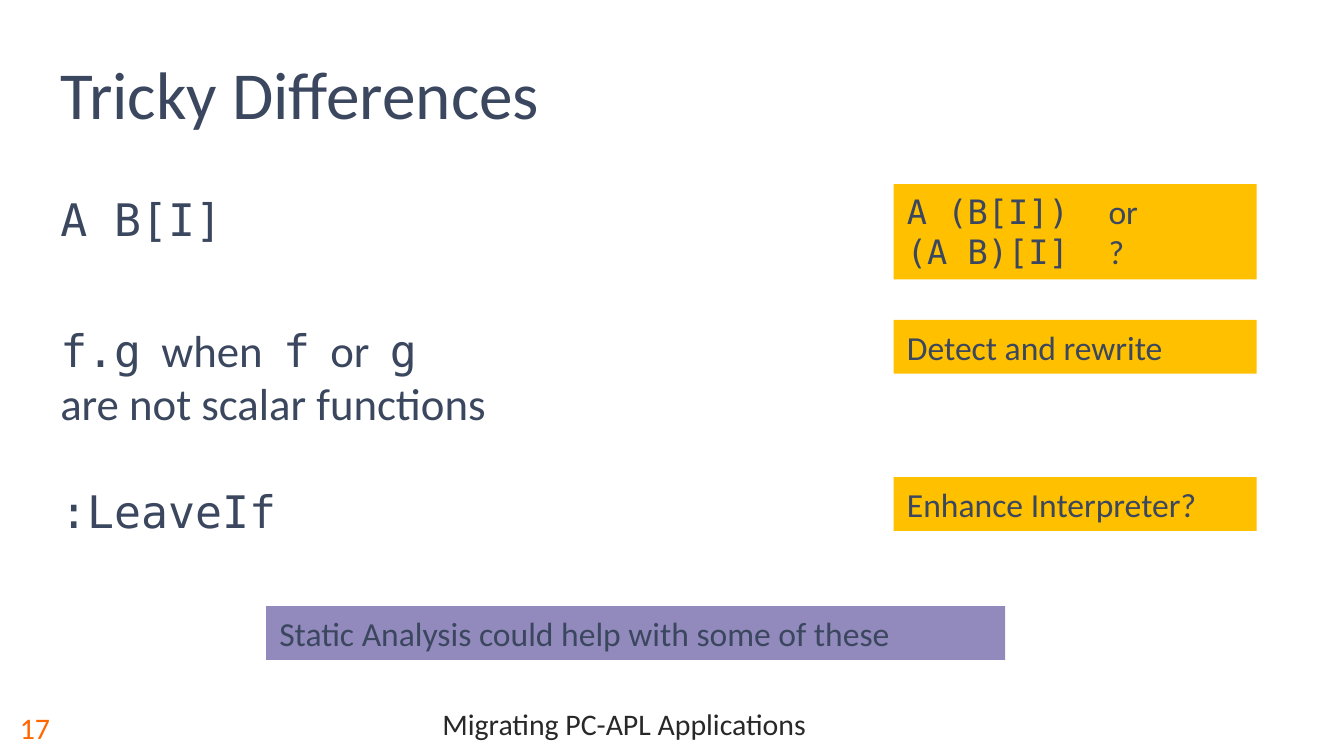
from lxml import etree
from pptx import Presentation
from pptx.dml.color import RGBColor
from pptx.enum.shapes import MSO_SHAPE
from pptx.enum.text import MSO_ANCHOR, PP_ALIGN
from pptx.oxml.ns import qn
from pptx.util import Inches, Pt

RECT = MSO_SHAPE.RECTANGLE
TOP, MID, LOW = MSO_ANCHOR.TOP, MSO_ANCHOR.MIDDLE, MSO_ANCHOR.BOTTOM
LEFT, MIDDLE = PP_ALIGN.LEFT, PP_ALIGN.CENTER
SANS, MONO = "Calibri", "DejaVu Sans Mono"
INK, DARK, ORANGE = "3B475E", "282828", "FF6600"
GOLD, MAUVE = "FFC000", "928ABD"

# Content: a paragraph is a list of lines, a line a list of (text, font)
TITLE = [[[("Tricky Differences", SANS)]]]
ISSUES = [
    [[("A B[I]", MONO)]],
    [[("f.g", MONO), ("  when  ", SANS), ("f", MONO), ("  or  ", SANS), ("g", MONO)],
     [("are not scalar functions", SANS)]],
    [[(":LeaveIf", MONO)]],
]
GAPS = [0, 41, 29]  # points before each issue
CHOICE = [[[("A (B[I])\t", MONO), ("or", SANS)],
           [("(A B)[I]\t", MONO), ("?", SANS)]]]
NOTES = [  # left, top, width, height, fill, text
    (6.65, 1.37, 2.7, 0.71, GOLD, CHOICE),
    (6.65, 2.38, 2.7, 0.4, GOLD, [[[("Detect and rewrite", SANS)]]]),
    (6.65, 3.55, 2.7, 0.4, GOLD, [[[("Enhance Interpreter?", SANS)]]]),
    (1.98, 4.51, 5.5, 0.4, MAUVE,
     [[[("Static Analysis could help with some of these", SANS)]]]),
]
FOOTER = [[[("Migrating PC-APL Applications", SANS)]]]
NUMBER = [[[("17", SANS)]]]


def paint(hue):
    return RGBColor.from_string(hue)


def place(shape, left, top, width, height):
    shape.left, shape.top = Inches(left), Inches(top)
    shape.width, shape.height = Inches(width), Inches(height)


def write(shape, paras, size=18, color=INK, align=LEFT, anchor=TOP,
          gaps=None, spacing=1, tab=None):
    frame = shape.text_frame
    frame.word_wrap = True
    frame.vertical_anchor = anchor
    frame.margin_left = frame.margin_right = Inches(0.1)
    frame.margin_top = frame.margin_bottom = Inches(0.05)
    for i, lines in enumerate(paras):
        para = frame.add_paragraph() if i else frame.paragraphs[0]
        para.alignment = align
        para.line_spacing = spacing
        para.space_before = Pt(gaps[i] if gaps else 0)
        if tab:
            stops = etree.SubElement(para._p.get_or_add_pPr(), qn("a:tabLst"))
            etree.SubElement(stops, qn("a:tab"), pos=str(Inches(tab)), algn="l")
        for j, line in enumerate(lines):
            if j:
                para.add_line_break()
            for text, face in line:
                run = para.add_run()
                run.text = text
                run.font.name = face
                run.font.size = Pt(size)
                run.font.color.rgb = paint(color)


def add_text(slide, box, paras, **style):
    write(slide.shapes.add_textbox(*map(Inches, box)), paras, **style)


def main():
    # A 16:9 slide
    deck = Presentation()
    deck.slide_width = Inches(10)
    deck.slide_height = Inches(10 * 9 / 16)
    slide = deck.slides.add_slide(deck.slide_layouts[5])

    # Title and issues
    title = slide.shapes.title
    place(title, 0.35, 0.29, 7.7, 0.75)
    write(title, TITLE, size=36, anchor=LOW)
    add_text(slide, (0.35, 1.38, 6.29, 3.55), ISSUES, size=24, gaps=GAPS)

    # Coloured notes
    for *box, fill, paras in NOTES:
        note = slide.shapes.add_shape(RECT, *map(Inches, box))
        note.shadow.inherit = False
        note.fill.solid()
        note.fill.fore_color.rgb = paint(fill)
        note.line.fill.background()
        write(note, paras, tab=1.5 if paras is CHOICE else None)

    # Footer and slide number
    add_text(slide, (0.78, 5.19, 7.73, 0.44), FOOTER, size=16, color=DARK,
             align=MIDDLE, anchor=MID, spacing=0.8)
    add_text(slide, (0.05, 5.19, 0.73, 0.44), NUMBER, size=16, color=ORANGE,
             anchor=MID)
    deck.save("out.pptx")


if __name__ == "__main__":
    main()
